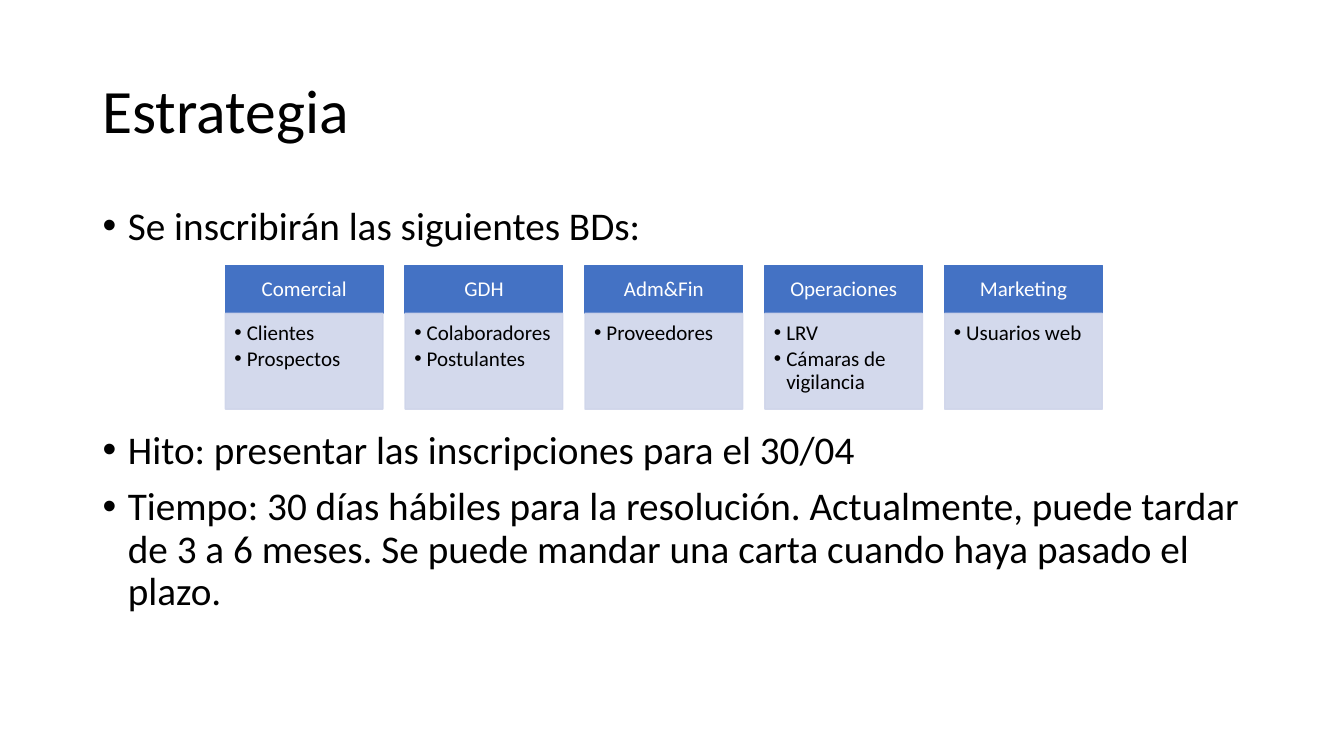
from lxml.etree import SubElement
from pptx import Presentation
from pptx.dml.color import RGBColor
from pptx.enum.shapes import MSO_SHAPE
from pptx.enum.text import MSO_ANCHOR, MSO_AUTO_SIZE, PP_ALIGN
from pptx.oxml.ns import qn
from pptx.util import Cm, Pt

BLACK = RGBColor(0x00, 0x00, 0x00)
WHITE = RGBColor(0xFF, 0xFF, 0xFF)
BLUE = RGBColor(0x44, 0x72, 0xC4)
PALE_BLUE = RGBColor(0xCF, 0xD5, 0xEA)
FONT = "Calibri"

AREAS = [
    ("Comercial", ["Clientes", "Prospectos"]),
    ("GDH", ["Colaboradores", "Postulantes"]),
    ("Adm&Fin", ["Proveedores"]),
    ("Operaciones", ["LRV", "Cámaras de vigilancia"]),
    ("Marketing", ["Usuarios web"]),
]
POINTS = [
    ("Se inscribirán las siguientes BDs:", 10),
    ("Hito: presentar las inscripciones para el 30/04", 130),
    ("Tiempo: 30 días hábiles para la resolución. Actualmente, puede tardar "
     "de 3 a 6 meses. Se puede mandar una carta cuando haya pasado el plazo.", 10),
]


def write(frame, text, size, color=BLACK, align=PP_ALIGN.LEFT, before=0, after=0, indent=None):
    para = frame.paragraphs[0]
    if para.runs:
        para = frame.add_paragraph()
    para.alignment = align
    para.line_spacing = 0.9
    para.space_before = Pt(before)
    para.space_after = Pt(after)
    span = para.add_run()
    span.text = text
    span.font.name = FONT
    span.font.size = Pt(size)
    span.font.color.rgb = color
    if indent is not None:
        properties = para._p.get_or_add_pPr()
        properties.set("marL", str(indent))
        properties.set("indent", str(-indent))
        SubElement(properties, qn("a:buFont"), typeface="Arial")
        SubElement(properties, qn("a:buChar"), char="•")


def place(shape, left, top, width, height):
    shape.left, shape.top, shape.width, shape.height = left, top, width, height
    shape.text_frame.word_wrap = True
    shape.text_frame.auto_size = MSO_AUTO_SIZE.NONE


def add_title(slide, left, top, width, height):
    title = slide.shapes.title
    place(title, left, top, width, height)
    title.text_frame.vertical_anchor = MSO_ANCHOR.MIDDLE
    write(title.text_frame, "Estrategia", 44)


def add_points(slide, left, top, width, height):
    body = slide.placeholders[1]
    place(body, left, top, width, height)
    for text, before in POINTS:
        write(body.text_frame, text, 28, before=before, indent=Cm(0.64))


def add_panel(group, left, top, width, height, color, insets, anchor, opacity=100):
    panel = group.shapes.add_shape(MSO_SHAPE.RECTANGLE, left, top, width, height)
    panel.shadow.inherit = False
    panel.fill.solid()
    panel.fill.fore_color.rgb = color
    panel.line.color.rgb = color
    panel.line.width = Pt(1)
    if opacity < 100:
        for tint in panel._element.spPr.iter(qn("a:srgbClr")):
            SubElement(tint, qn("a:alpha"), val=str(opacity * 1000))
    frame = panel.text_frame
    frame.word_wrap = True
    frame.vertical_anchor = anchor
    frame.margin_left, frame.margin_top, frame.margin_right, frame.margin_bottom = map(Cm, insets)
    return frame


def add_area(group, left, top, width, height, name, databases):
    header_height = int(height / 3)
    header = add_panel(group, left, top, width, header_height, BLUE,
                       (0.3, 0.17, 0.3, 0.17), MSO_ANCHOR.MIDDLE)
    write(header, name, 15, color=WHITE, align=PP_ALIGN.CENTER)
    content = add_panel(group, left, top + header_height, width, height - header_height,
                        PALE_BLUE, (0.23, 0.23, 0.3, 0.33), MSO_ANCHOR.TOP, opacity=90)
    for database in databases:
        write(content, database, 15, after=2.25, indent=Cm(0.31))


def add_areas(slide, left, top, width, height):
    group = slide.shapes.add_group_shape()
    gap = Cm(0.56)
    area_width = int((width - gap * (len(AREAS) - 1)) / len(AREAS))
    for index, (name, databases) in enumerate(AREAS):
        add_area(group, left + index * (area_width + gap), top, area_width, height,
                 name, databases)


def main():
    deck = Presentation()
    deck.slide_width, deck.slide_height = Cm(33.87), Cm(19.05)
    slide = deck.slides.add_slide(deck.slide_layouts[1])
    add_title(slide, Cm(2.33), Cm(1.01), Cm(29.21), Cm(3.68))
    add_points(slide, Cm(2.33), Cm(5.07), Cm(29.21), Cm(12.09))
    add_areas(slide, Cm(5.68), Cm(6.69), Cm(22.1), Cm(3.62))
    deck.save("out.pptx")


if __name__ == "__main__":
    main()
